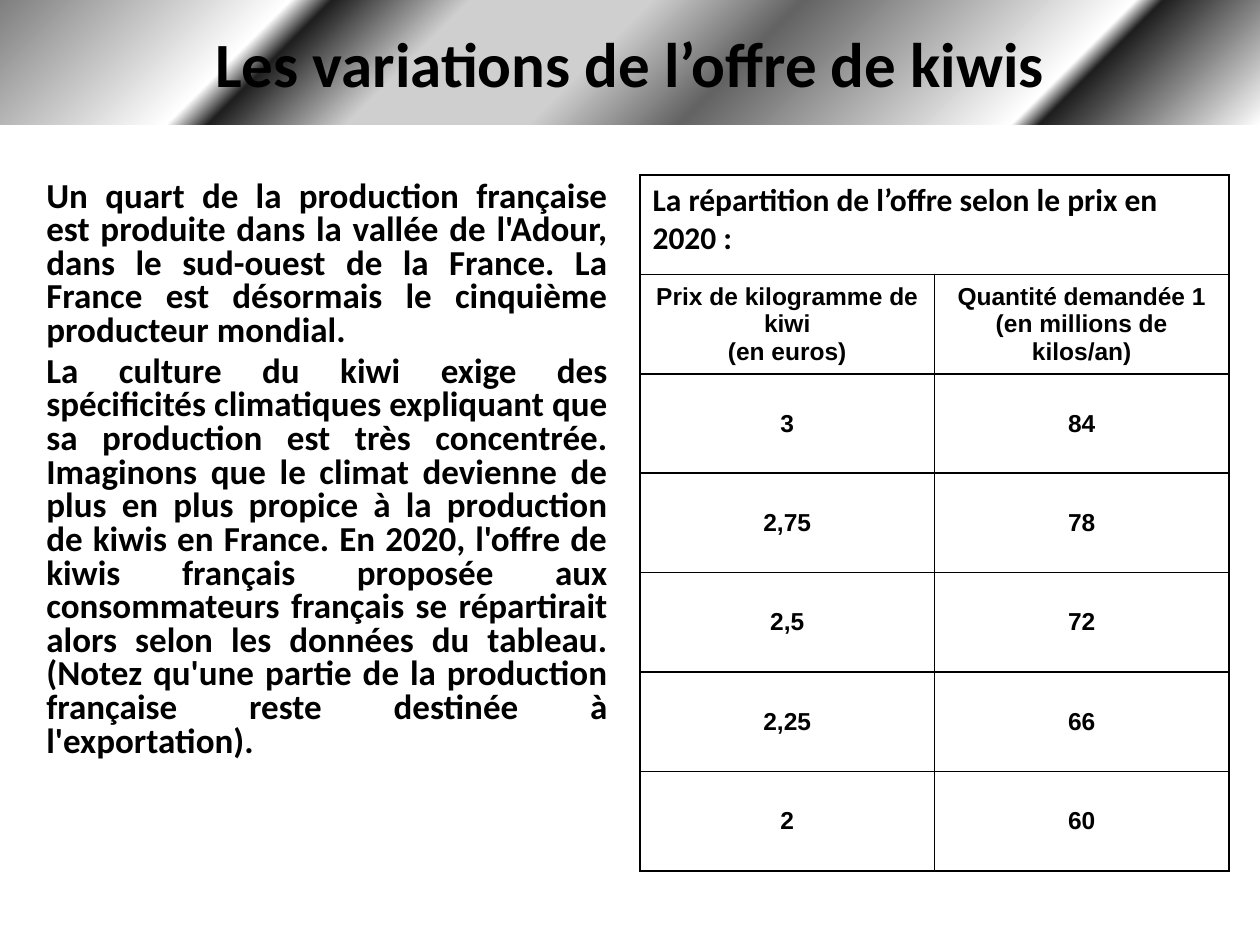
from dataclasses import dataclass

from lxml.etree import SubElement as Sub
from pptx import Presentation
from pptx.dml.color import RGBColor as RGB
from pptx.enum.shapes import MSO_SHAPE as SHAPE
from pptx.enum.text import MSO_ANCHOR as ANCHOR, PP_ALIGN as ALIGN
from pptx.oxml.ns import qn
from pptx.util import Emu, Pt

SCALE = 914400 / 126


@dataclass(frozen=True)
class Theme:
    ink: str = "000000"
    font: str = "Calibri"
    grid: str = "Arial"
    title: int = 36
    body: int = 20
    head: int = 18
    cell: int = 14
    rule: int = 1
    metal: tuple = (
        (0, "FFFFFF"), (16, "1F1F1F"), (18, "FFFFFF"), (42, "636363"),
        (53, "CFCFCF"), (66, "CFCFCF"), (76, "1F1F1F"), (79, "FFFFFF"),
        (100, "7F7F7F"),
    )


THEME = Theme()

TITLE = "Les variations de l’offre de kiwis"
BODY = (
    "Un quart de la production française est produite dans la vallée de "
    "l'Adour, dans le sud-ouest de la France. La France est désormais le "
    "cinquième producteur mondial.",
    "La culture du kiwi exige des spécificités climatiques expliquant que sa "
    "production est très concentrée. Imaginons que le climat devienne de plus "
    "en plus propice à la production de kiwis en France. En 2020, l'offre de "
    "kiwis français proposée aux consommateurs français se répartirait alors "
    "selon les données du tableau. (Notez qu'une partie de la production "
    "française reste destinée à l'exportation).",
)
HEAD = "La répartition de l’offre selon le prix en 2020 :"
ROWS = (
    (("Prix de kilogramme de kiwi", "(en euros)"),
     ("Quantité demandée 1", "(en millions de kilos/an)")),
    (("3",), ("84",)),
    (("2,75",), ("78",)),
    (("2,5",), ("72",)),
    (("2,25",), ("66",)),
    (("2",), ("60",)),
)


def px(*nums):
    return [Emu(round(n * SCALE)) for n in nums]


def put(obj, form):
    for key, val in form.items():
        setattr(obj, key, val)


def write(frame, lines, size, font, form):
    """Fill a text frame with one bold paragraph per line."""
    for i, line in enumerate(lines):
        para = frame.add_paragraph() if i else frame.paragraphs[0]
        put(para, form)
        run = para.add_run()
        run.text = line
        put(run.font, {"size": Pt(size), "name": font, "bold": True})
        run.font.color.rgb = RGB.from_string(THEME.ink)


def blend(shape, stops, angle):
    """Give a shape a gradient with any number of stops."""
    shape.fill.gradient()
    shape.fill.gradient_angle = angle
    band = shape._element.spPr.find(".//" + qn("a:gsLst"))
    for old in list(band):
        band.remove(old)
    for pos, color in stops:
        stop = Sub(band, qn("a:gs"), pos=str(pos * 1000))
        Sub(stop, qn("a:srgbClr"), val=color)


def add_title(slide):
    bar = slide.shapes.add_shape(SHAPE.RECTANGLE, *px(0, 0, 1260, 125))
    bar.shadow.inherit = False
    bar.line.fill.background()
    blend(bar, THEME.metal, 135)
    put(bar.text_frame, {"word_wrap": True, "vertical_anchor": ANCHOR.MIDDLE})
    write(bar.text_frame, [TITLE], THEME.title, THEME.font,
          {"alignment": ALIGN.CENTER})


def add_body(slide):
    box = slide.shapes.add_textbox(*px(34, 175, 586, 694))
    box.text_frame.word_wrap = True
    write(box.text_frame, BODY, THEME.body, THEME.font,
          {"alignment": ALIGN.JUSTIFY, "line_spacing": 0.8,
           "space_before": Pt(THEME.body * 0.2)})


def frame_cell(cell):
    """Draw all four borders of a cell and clear its fill."""
    props = cell._tc.get_or_add_tcPr()
    for side in "LRTB":
        line = Sub(props, qn("a:ln" + side), w=str(Pt(THEME.rule)))
        fill = Sub(line, qn("a:solidFill"))
        Sub(fill, qn("a:srgbClr"), val=THEME.ink)
    cell.fill.background()


def add_grid(slide):
    shape = slide.shapes.add_table(len(ROWS) + 1, 2, *px(640, 175, 589, 696))
    table = shape.table
    put(table, {"first_row": False, "horz_banding": False})
    for cell in table.iter_cells():
        frame_cell(cell)
    top = table.cell(0, 0)
    top.merge(table.cell(0, 1))
    write(top.text_frame, [HEAD], THEME.head, THEME.font,
          {"alignment": ALIGN.LEFT})
    side, none = px(9, 0)
    form = {"vertical_anchor": ANCHOR.MIDDLE, "margin_left": side,
            "margin_right": side, "margin_top": none, "margin_bottom": none}
    for r, row in enumerate(ROWS, 1):
        for c, lines in enumerate(row):
            cell = table.cell(r, c)
            put(cell, form)
            write(cell.text_frame, lines, THEME.cell, THEME.grid,
                  {"alignment": ALIGN.CENTER})


def main():
    deck = Presentation()
    deck.slide_width, deck.slide_height = px(1260, 945)
    slide = deck.slides.add_slide(deck.slide_layouts[6])
    add_title(slide)
    add_body(slide)
    add_grid(slide)
    deck.save("out.pptx")


if __name__ == "__main__":
    main()
